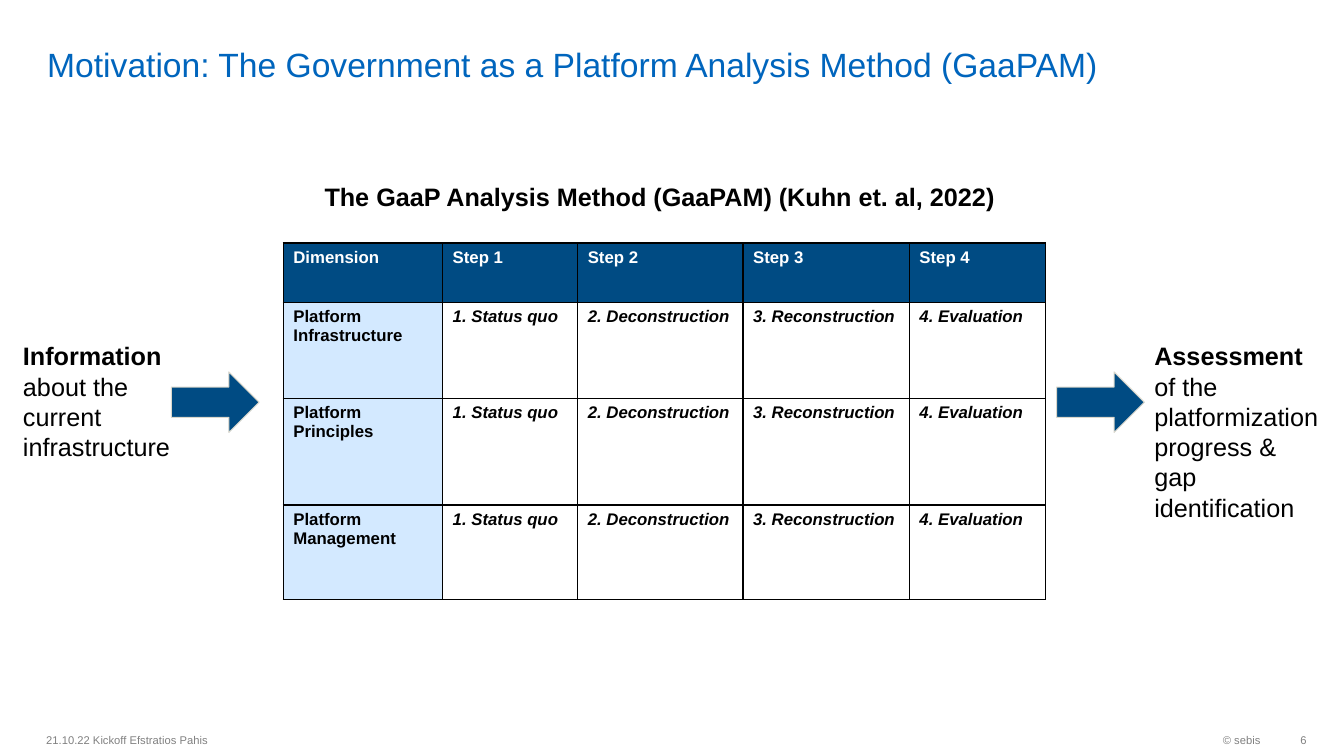
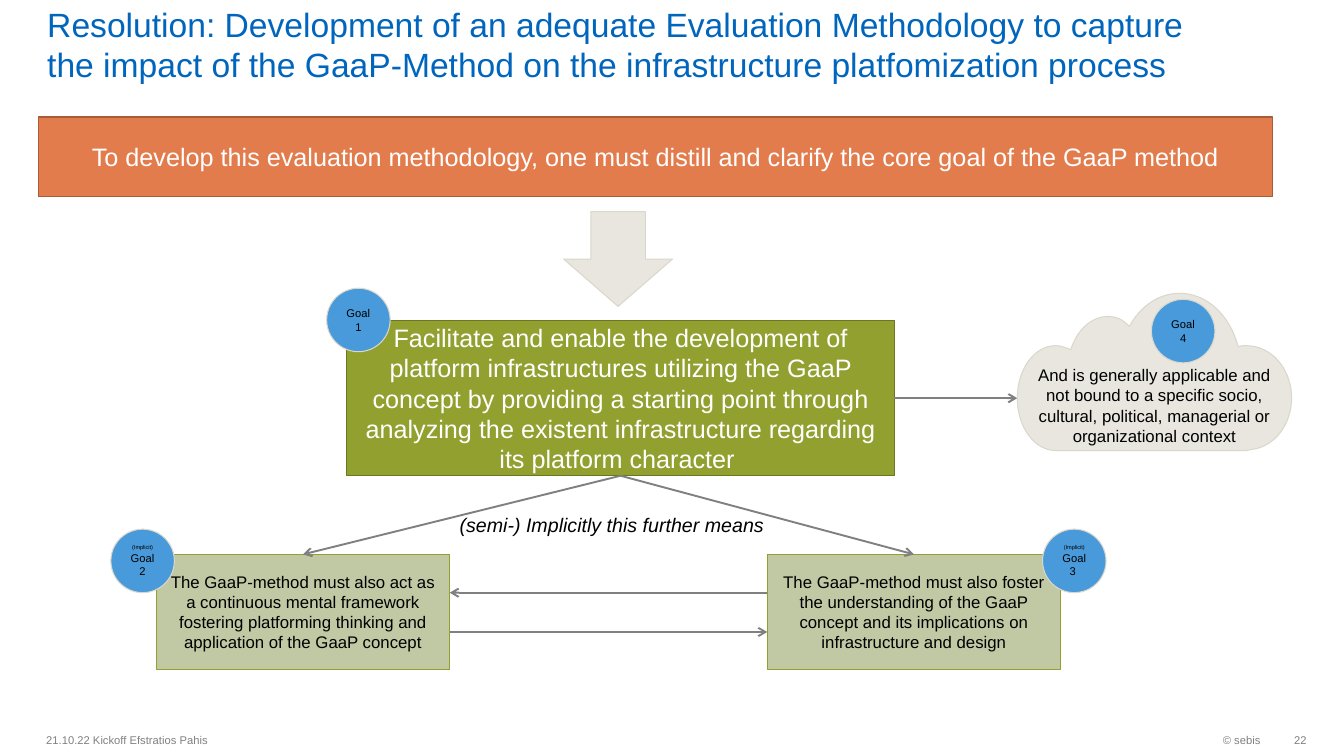
from typing import NamedTuple
from lxml.etree import SubElement
from pptx import Presentation
from pptx.dml.color import RGBColor
from pptx.enum.shapes import MSO_CONNECTOR, MSO_SHAPE as Preset
from pptx.enum.text import MSO_ANCHOR as Anchor, PP_ALIGN as Align
from pptx.oxml import parse_xml
from pptx.oxml.ns import nsdecls, qn
from pptx.util import Inches, Pt

FONT = "Arial"
BLACK = RGBColor(0x00, 0x00, 0x00)
WHITE = RGBColor(0xFF, 0xFF, 0xFF)
GRAY = RGBColor(0x80, 0x80, 0x80)
TITLE_BLUE = RGBColor(0x00, 0x65, 0xBD)
NAVY = RGBColor(0x00, 0x4B, 0x83)
PALE_BLUE = RGBColor(0xD3, 0xE9, 0xFF)
GOAL_BLUE = RGBColor(0x48, 0x9A, 0xDA)
STONE = RGBColor(0xE8, 0xE6, 0xDF)
STONE_LINE = RGBColor(0xDA, 0xD7, 0xCB)
ORANGE = RGBColor(0xE3, 0x7C, 0x4D)
ORANGE_LINE = RGBColor(0xA8, 0x5C, 0x39)
OLIVE = RGBColor(0x91, 0xA0, 0x2F)
OLIVE_LINE = RGBColor(0x6B, 0x76, 0x23)
PALE_OLIVE = RGBColor(0xC1, 0xC8, 0xA4)


class Box(NamedTuple):
    left: float
    top: float
    width: float
    height: float

    @property
    def right(self):
        return self.left + self.width

    @property
    def bottom(self):
        return self.top + self.height

    @property
    def center(self):
        return self.left + self.width / 2

    @property
    def middle(self):
        return self.top + self.height / 2

    def lengths(self):
        return [Inches(value) for value in self]


class Run(NamedTuple):
    text: str
    size: float
    color: RGBColor = BLACK
    bold: bool = False
    italic: bool = False


def write(frame, paragraphs, align=Align.LEFT, anchor=Anchor.TOP):
    frame.word_wrap = True
    frame.vertical_anchor = anchor
    for index, runs in enumerate(paragraphs):
        paragraph = frame.add_paragraph() if index else frame.paragraphs[0]
        paragraph.alignment = align
        for part in runs:
            run = paragraph.add_run()
            run.text = part.text
            font = run.font
            font.name = FONT
            font.size = Pt(part.size)
            font.bold = part.bold
            font.italic = part.italic
            font.color.rgb = part.color


def add_text(slide, box, *runs, **layout):
    frame = slide.shapes.add_textbox(*box.lengths()).text_frame
    write(frame, [runs], **layout)
    return frame


def paint(shape, fill, line, width=0.75):
    shape.shadow.inherit = False
    shape.fill.solid()
    shape.fill.fore_color.rgb = fill
    shape.line.color.rgb = line
    shape.line.width = Pt(width)


def add_preset(slide, preset, box, fill, line, paragraphs=(), width=0.75):
    shape = slide.shapes.add_shape(preset, *box.lengths())
    paint(shape, fill, line, width)
    write(shape.text_frame, paragraphs, Align.CENTER, Anchor.MIDDLE)


def add_arrow(slide, start, end):
    points = [Inches(value) for value in (*start, *end)]
    connector = slide.shapes.add_connector(MSO_CONNECTOR.STRAIGHT, *points)
    connector.line.color.rgb = GRAY
    connector.line.width = Pt(1.35)
    SubElement(connector.line._get_or_add_ln(), qn("a:tailEnd"), type="arrow")
    SubElement(connector._element.spPr, qn("a:effectLst"))


def add_goal(slide, left, top, *paragraphs):
    add_preset(slide, Preset.OVAL, Box(left, top, 0.63, 0.63),
               GOAL_BLUE, STONE_LINE, paragraphs)


def add_cloud(slide, box, text):
    start = (1.61, 0)
    segments = [
        ((1.88, 0), (2.11, 0.22), (2.19, 0.53)),
        ((2.21, 0.52), (2.24, 0.52), (2.27, 0.52)),
        ((2.52, 0.52), (2.72, 0.75), (2.72, 1.04)),
        ((2.72, 1.31), (2.54, 1.53), (2.32, 1.55)),
        ((2.27, 1.56),),
        ((0.38, 1.56),),
        ((0.17, 1.56), (0, 1.33), (0, 1.04)),
        ((0, 0.75), (0.17, 0.52), (0.38, 0.52)),
        ((0.43, 0.52), (0.48, 0.54), (0.53, 0.56)),
        ((0.59, 0.37), (0.73, 0.23), (0.9, 0.23)),
        ((0.98, 0.23), (1.05, 0.26), (1.11, 0.33)),
        ((1.22, 0.13), (1.4, 0), start),
    ]
    builder = slide.shapes.build_freeform(Inches(start[0]), Inches(start[1]))
    builder.add_line_segments(
        [(Inches(segment[-1][0]), Inches(segment[-1][1])) for segment in segments])
    cloud = builder.convert_to_shape(Inches(box.left), Inches(box.top))
    line_tags = list(cloud._element.iter(qn("a:lnTo")))
    for line_tag, (*controls, _) in zip(line_tags, segments):
        if controls:
            line_tag.tag = qn("a:cubicBezTo")
        for index, (x, y) in enumerate(controls):
            line_tag.insert(index, parse_xml(
                f'<a:pt {nsdecls("a")} x="{Inches(x)}" y="{Inches(y)}"/>'))
    paint(cloud, STONE, STONE_LINE)
    write(cloud.text_frame, [[Run(text, 12)]], Align.CENTER, Anchor.BOTTOM)


def set_borders(cell):
    properties = cell._tc.get_or_add_tcPr()
    for index, side in enumerate(("lnL", "lnR", "lnT", "lnB")):
        properties.insert(index, parse_xml(
            f'<a:{side} {nsdecls("a")} w="{Pt(1)}"><a:solidFill>'
            f'<a:srgbClr val="{BLACK}"/></a:solidFill></a:{side}>'))


def add_method_table(slide, box):
    header = ["Dimension"] + [f"Step {step}" for step in range(1, 5)]
    steps = ["1. Status quo", "2. Deconstruction", "3. Reconstruction", "4. Evaluation"]
    dimensions = ["Infrastructure", "Principles", "Management"]
    rows = [header] + [[f"Platform {name}"] + steps for name in dimensions]
    table = slide.shapes.add_table(len(rows), len(header), *box.lengths()).table
    for column, width in zip(table.columns, (1.58, 1.34, 1.64, 1.65, 1.35)):
        column.width = Inches(width)
    for row, height in zip(table.rows, (0.59, 0.95, 1.06, 0.94)):
        row.height = Inches(height)
    for r, texts in enumerate(rows):
        for c, text in enumerate(texts):
            cell = table.cell(r, c)
            if r and c:
                cell.fill.background()
            else:
                cell.fill.solid()
                cell.fill.fore_color.rgb = PALE_BLUE if r else NAVY
            set_borders(cell)
            run = Run(text, 12, BLACK if r else WHITE, True, bool(r and c))
            write(cell.text_frame, [[run]])


def new_slide(presentation, title, number):
    slide = presentation.slides.add_slide(presentation.slide_layouts[6])
    frame = add_text(slide, Box(0.37, 0.05, 11.58, 0.79),
                     Run(title, 24, TITLE_BLUE), anchor=Anchor.BOTTOM)
    frame.margin_top = frame.margin_bottom = 0
    add_text(slide, Box(0.36, 7.18, 6.3, 0.32),
             Run("21.10.22 Kickoff Efstratios Pahis", 8, GRAY), anchor=Anchor.MIDDLE)
    add_text(slide, Box(10.26, 7.18, 2.34, 0.32), Run("© sebis", 8, GRAY),
             align=Align.RIGHT, anchor=Anchor.MIDDLE)
    page = add_text(slide, Box(12.6, 7.18, 0.36, 0.32), Run(str(number), 8, GRAY),
                    align=Align.RIGHT, anchor=Anchor.MIDDLE)
    page.margin_right = 0
    return slide


def build_motivation(presentation):
    slide = new_slide(
        presentation, "Motivation: The Government as a Platform Analysis Method (GaaPAM)", 6)
    add_method_table(slide, Box(2.81, 2.41, 7.56, 3.54))
    for left in (1.7, 10.48):
        add_preset(slide, Preset.RIGHT_ARROW, Box(left, 3.69, 0.87, 0.6), NAVY, STONE_LINE)
    add_text(slide, Box(0.13, 3.33, 1.73, 1.31), Run("Information ", 18, bold=True),
             Run("about the current infrastructure", 18))
    add_text(slide, Box(11.35, 3.33, 1.85, 1.92), Run("Assessment ", 18, bold=True),
             Run("of the platformization progress & gap identification", 18))
    add_text(slide, Box(3.12, 1.75, 6.85, 0.4),
             Run("The GaaP Analysis Method (GaaPAM) (Kuhn et. al, 2022)", 18, bold=True))


def build_resolution(presentation):
    slide = new_slide(
        presentation,
        "Resolution: Development of an adequate Evaluation Methodology to capture "
        "the impact of the GaaP-Method on the infrastructure platfomization process", 22)
    banner = Box(0.38, 1.16, 12.24, 0.79)
    core = Box(3.44, 3.18, 5.43, 1.54)
    framework = Box(1.55, 5.5, 2.91, 1.14)
    understanding = framework._replace(left=7.61)
    cloud = Box(10.09, 2.91, 2.72, 1.56)

    add_preset(slide, Preset.RECTANGLE, banner, ORANGE, ORANGE_LINE, [[Run(
        "To develop this evaluation methodology, one must distill and clarify "
        "the core goal of the GaaP method", 18, WHITE)]], 0.85)
    add_preset(slide, Preset.DOWN_ARROW, Box(5.59, 2.1, 1.08, 0.94), STONE, STONE_LINE)
    add_preset(slide, Preset.RECTANGLE, core, OLIVE, OLIVE_LINE, [[Run(
        "Facilitate and enable the development of platform infrastructures utilizing "
        "the GaaP concept by providing a starting point through analyzing the existent "
        "infrastructure regarding its platform character ", 18, WHITE)]], 0.85)
    for box, text in (
        (framework, "The GaaP-method must also act as a continuous mental framework "
                    "fostering platforming thinking and application of the GaaP concept"),
        (understanding, "The GaaP-method must also foster the understanding of the GaaP "
                        "concept and its implications on infrastructure and design"),
    ):
        add_preset(slide, Preset.RECTANGLE, box, PALE_OLIVE, OLIVE, [[Run(text, 12)]])
        add_arrow(slide, (core.center, core.bottom), (box.center, box.top))
    add_arrow(slide, (understanding.left, 5.88), (framework.right, 5.88))
    add_arrow(slide, (framework.right, 6.27), (understanding.left, 6.27))
    add_arrow(slide, (core.right, core.middle), (cloud.left, core.middle))
    remark = add_text(slide, Box(4.46, 5.04, 3.29, 0.34),
                      Run("(semi-) Implicitly this further means", 14, italic=True))
    remark.word_wrap = False
    add_cloud(slide, cloud,
              "And is generally applicable and not bound to a specific socio, cultural, "
              "political, managerial or organizational context")
    add_goal(slide, core.left - 0.2, core.top - 0.32, [Run("Goal 1", 8)])
    add_goal(slide, framework.left - 0.45, framework.top - 0.25,
             [Run("(Implicit)", 4)], [Run("Goal 2", 8)])
    add_goal(slide, understanding.right - 0.18, understanding.top - 0.25,
             [Run("(Implicit) ", 4), Run("Goal 3 ", 8)])
    add_goal(slide, cloud.left + 1.33, cloud.top + 0.06, [Run("Goal 4", 8)])


def main():
    presentation = Presentation()
    presentation.slide_width = Inches(13.33)
    presentation.slide_height = Inches(7.5)
    build_motivation(presentation)
    build_resolution(presentation)
    presentation.save("out.pptx")


if __name__ == "__main__":
    main()
